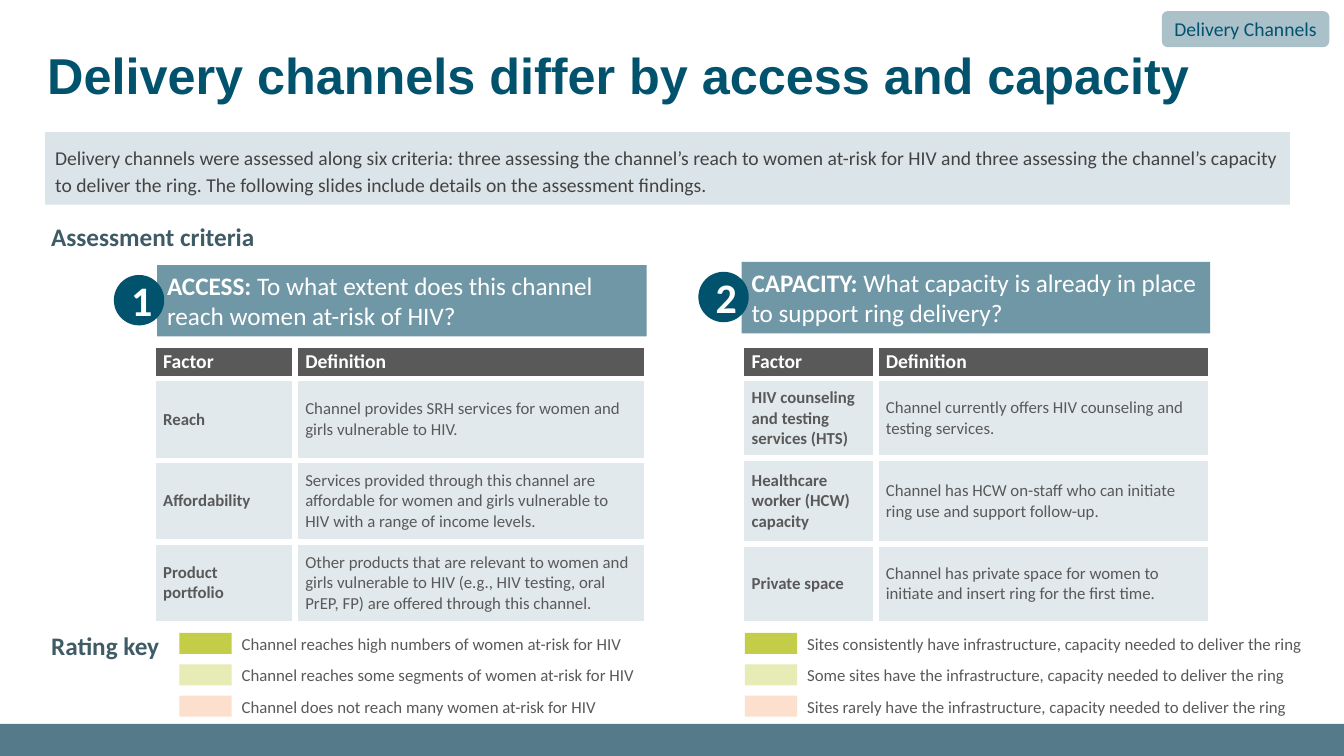
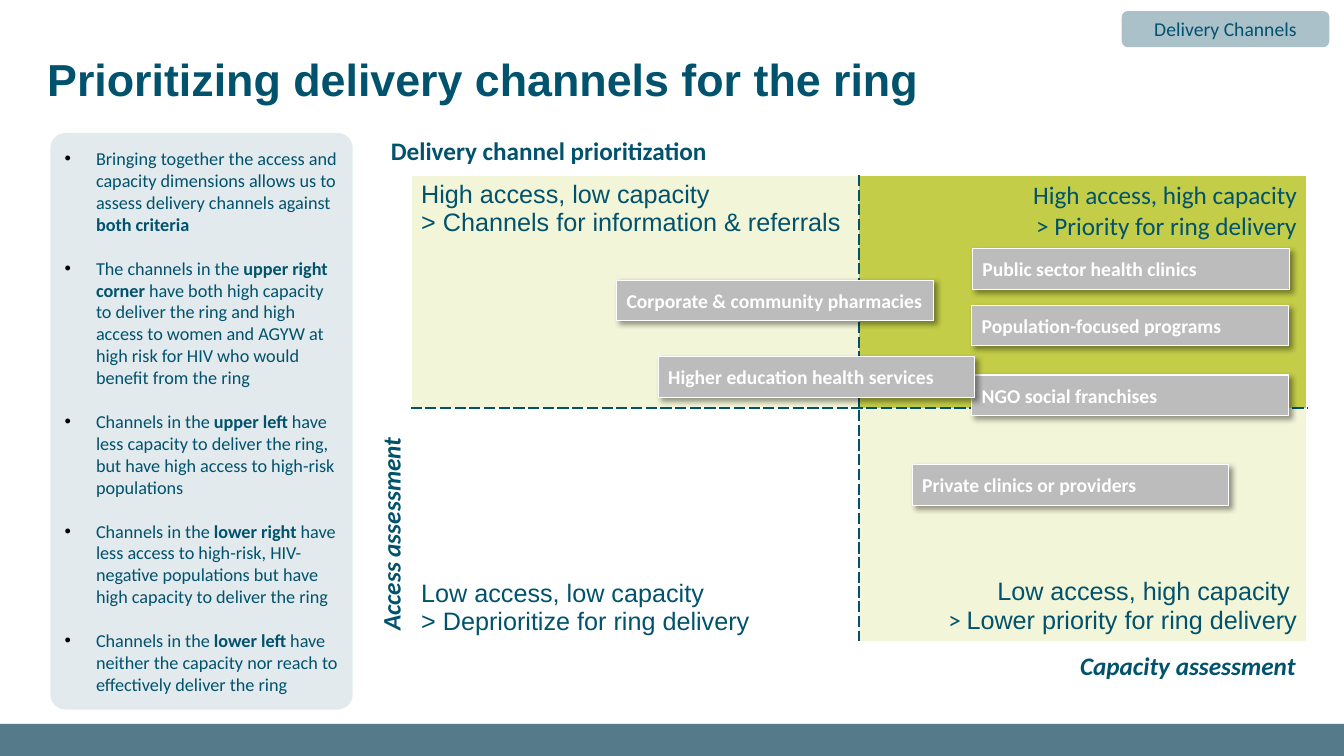
from lxml.etree import SubElement
from pptx import Presentation
from pptx.dml.color import RGBColor
from pptx.enum.shapes import MSO_SHAPE as Preset
from pptx.enum.text import MSO_ANCHOR as Anchor, PP_ALIGN as Align
from pptx.oxml.ns import qn
from pptx.util import Cm, Pt

COLORS = {
    "navy": "01526C", "band": "557A89", "tag": "AAC1CA", "heading": "7097A6",
    "section": "3F5B66", "intro": "DBE4E8", "intro_text": "434343",
    "gray": "595959", "cell": "E1E9EC", "panel": "E2EAED", "chip": "BCBCBC",
    "green": "C3CD47", "light_green": "E7EBB5", "peach": "FDDFCD",
    "pale": "F3F5D8", "white": "FFFFFF", "black": "000000",
}
WIDTH, HEIGHT = 33.87, 19.05
BAND_TOP = 18.24
TAG_RIGHT = 33.5
BOLD = {"bold": True}
CALIBRI = {"font": "Calibri"}

INTRO = (
    "Delivery channels were assessed along six criteria: three assessing the channel’s reach "
    "to women at-risk for HIV and three assessing the channel’s capacity to deliver the ring. "
    "The following slides include details on the assessment findings."
)
CRITERIA = [
    {
        "number": "1", "name": "ACCESS: ",
        "question": "To what extent does this channel reach women at-risk of HIV?",
        "heading": (3.96, 6.68, 12.34, 1.8),
        "table": (3.86, 8.69), "columns": [3.58, 8.86], "rows": [0.81, 2.06, 2.06, 2.06],
        "factors": [
            ("Reach", "Channel provides SRH services for women and girls vulnerable to HIV."),
            ("Affordability", "Services provided through this channel are affordable for women "
             "and girls vulnerable to HIV with a range of income levels."),
            ("Product\nportfolio", "Other products that are relevant to women and girls vulnerable "
             "to HIV (e.g., HIV testing, oral PrEP, FP) are offered through this channel."),
        ],
        "key_left": 4.52,
        "key": [
            "Channel reaches high numbers of women at-risk for HIV",
            "Channel reaches some segments of women at-risk for HIV",
            "Channel does not reach many women at-risk for HIV",
        ],
    },
    {
        "number": "2", "name": "CAPACITY: ",
        "question": "What capacity is already in place to support ring delivery?",
        "heading": (18.69, 6.6, 11.81, 1.8),
        "table": (18.69, 8.69), "columns": [3.38, 8.43], "rows": [0.81, 2.01, 2.16, 2.01],
        "factors": [
            ("HIV counseling and testing services (HTS)",
             "Channel currently offers HIV counseling and testing services."),
            ("Healthcare worker (HCW) capacity",
             "Channel has HCW on-staff who can initiate ring use and support follow-up."),
            ("Private space",
             "Channel has private space for women to initiate and insert ring for the first time."),
        ],
        "key_left": 18.77,
        "key": [
            "Sites consistently have infrastructure, capacity needed to deliver the ring",
            "Some sites have the infrastructure, capacity needed to deliver the ring",
            "Sites rarely have the infrastructure, capacity needed to deliver the ring",
        ],
    },
]
KEY_COLORS = ["green", "light_green", "peach"]
KEY_TOP, KEY_STEP = 15.95, 0.79

FINDINGS = [
    ["Bringing together the access and capacity dimensions allows us to assess delivery "
     "channels against ", ("both criteria", BOLD)],
    ["The channels in the ", ("upper right corner", BOLD),
     " have both high capacity to deliver the ring and high access to women and AGYW at high "
     "risk for HIV who would benefit from the ring"],
    ["Channels in the ", ("upper left ", BOLD),
     "have less capacity to deliver the ring, but have high access to high-risk populations"],
    ["Channels in the ", ("lower right ", BOLD),
     "have less access to high-risk, HIV-negative populations but have high capacity to "
     "deliver the ring"],
    ["Channels in the ", ("lower left ", BOLD),
     "have neither the capacity nor reach to effectively deliver the ring"],
]
QUADRANTS = [
    [
        (["High access, low capacity", "> Channels for information & referrals"],
         {"font": "Arial", "fill": "pale", "sides": "RB"}),
        (["High access, high capacity", "> Priority for ring delivery"],
         {"font": "Calibri", "fill": "green", "sides": "LB"}),
    ],
    [
        (["Low access, low capacity", "> Deprioritize for ring delivery"],
         {"font": "Arial", "fill": "white", "sides": "RT"}),
        (["Low access, high capacity ", [("> ", CALIBRI), "Lower priority for ring delivery"]],
         {"font": "Arial", "fill": "pale", "sides": "LT"}),
    ],
]
CHANNELS = [
    ("Corporate & community pharmacies", 15.54, 7.06),
    ("Private clinics or providers", 22.99, 11.71),
    ("NGO social franchises", 24.49, 9.45),
    ("Public sector health clinics", 24.51, 6.27),
    ("Population-focused programs", 24.49, 7.7),
    ("Higher education health services", 16.59, 8.99),
]
CHIP_SIZE = (7.98, 1.02)


def color(name):
    return RGBColor.from_string(COLORS[name])


def write_text(frame, paragraphs, size=18, font="Calibri", ink="navy", bold=False, italic=False,
               align=Align.LEFT, spacing=None, gap=0, bullet=False):
    for index, runs in enumerate(paragraphs):
        paragraph = frame.add_paragraph() if index else frame.paragraphs[0]
        paragraph.alignment = align
        paragraph.line_spacing = spacing
        paragraph.space_before = Pt(gap if index else 0)
        if bullet:
            add_bullet(paragraph)
        for item in [runs] if isinstance(runs, str) else runs:
            text, changes = (item, {}) if isinstance(item, str) else item
            for number, line in enumerate(text.split("\n")):
                if number:
                    paragraph.add_line_break()
                run = paragraph.add_run()
                run.text = line
                run.font.name = changes.get("font", font)
                run.font.size = Pt(size)
                run.font.bold = changes.get("bold", bold)
                run.font.italic = italic
                run.font.color.rgb = color(ink)


def add_bullet(paragraph):
    properties = paragraph._p.get_or_add_pPr()
    properties.set("marL", str(Cm(0.79)))
    properties.set("indent", str(-Cm(0.79)))
    bullet_color = SubElement(properties, qn("a:buClr"))
    SubElement(bullet_color, qn("a:srgbClr"), val=COLORS["black"])
    SubElement(properties, qn("a:buFont"), typeface="Arial")
    SubElement(properties, qn("a:buChar"), char="•")


def add_text(slide, at, paragraphs, anchor=Anchor.TOP, rotation=0, **style):
    box = slide.shapes.add_textbox(*map(Cm, at))
    box.rotation = rotation
    box.text_frame.word_wrap = True
    box.text_frame.vertical_anchor = anchor
    write_text(box.text_frame, paragraphs, **style)


def add_shape(slide, preset, at, fill, paragraphs=(), anchor=Anchor.MIDDLE, radius=None,
              line=None, **style):
    shape = slide.shapes.add_shape(preset, *map(Cm, at))
    shape.shadow.inherit = False
    shape.fill.solid()
    shape.fill.fore_color.rgb = color(fill)
    if line:
        shape.line.color.rgb = color(line)
        shape.line.width = Pt(0.75)
    else:
        shape.line.fill.background()
    if radius is not None:
        shape.adjustments[0] = radius
    shape.text_frame.word_wrap = True
    shape.text_frame.vertical_anchor = anchor
    write_text(shape.text_frame, paragraphs, **style)
    return shape


def add_shadow(shape):
    effects = shape._element.spPr.find(qn("a:effectLst"))
    shadow = SubElement(effects, qn("a:outerShdw"), blurRad=str(Pt(4)), dist=str(Pt(3)),
                        dir="2700000", algn="tl", rotWithShape="0")
    shade = SubElement(shadow, qn("a:srgbClr"), val=COLORS["black"])
    SubElement(shade, qn("a:alpha"), val="40000")


def add_table(slide, at, columns, rows):
    size = (sum(columns), sum(rows))
    table = slide.shapes.add_table(len(rows), len(columns), *map(Cm, (*at, *size))).table
    table.first_row = table.horz_banding = False
    for column, width in zip(table.columns, columns):
        column.width = Cm(width)
    for row, height in zip(table.rows, rows):
        row.height = Cm(height)
    return table


def fill_cell(cell, paragraphs, fill, sides, border, width, dash="solid", anchor=Anchor.MIDDLE,
              **style):
    properties = cell._tc.get_or_add_tcPr()
    for side in sides:
        line = SubElement(properties, qn(f"a:ln{side}"), w=str(Pt(width)))
        solid = SubElement(line, qn("a:solidFill"))
        SubElement(solid, qn("a:srgbClr"), val=COLORS[border])
        SubElement(line, qn("a:prstDash"), val=dash)
    cell.fill.solid()
    cell.fill.fore_color.rgb = color(fill)
    cell.vertical_anchor = anchor
    write_text(cell.text_frame, paragraphs, **style)


def add_base_slide(presentation, title, title_size, tag_width):
    slide = presentation.slides.add_slide(presentation.slide_layouts[6])
    add_shape(slide, Preset.RECTANGLE, (0, BAND_TOP, WIDTH, HEIGHT - BAND_TOP), "band")
    add_text(slide, (0.94, 0.58, 31.8, 2.21), [title], anchor=Anchor.BOTTOM, size=title_size,
             font="Arial", bold=True, spacing=0.9)
    add_shape(slide, Preset.ROUNDED_RECTANGLE, (TAG_RIGHT - tag_width, 0.28, tag_width, 0.91),
              "tag", ["Delivery Channels"], radius=0.167, size=14, align=Align.CENTER)
    return slide


def add_criterion(slide, criterion):
    left, top = criterion["heading"][:2]
    add_shape(slide, Preset.RECTANGLE, criterion["heading"], "heading",
              [[(criterion["name"], BOLD), criterion["question"]]], anchor=Anchor.TOP, ink="white")
    add_shape(slide, Preset.OVAL, (left - 1.09, top + 0.25, 1.27, 1.27), "navy",
              [criterion["number"]], size=30, bold=True, ink="white", align=Align.CENTER)

    table = add_table(slide, criterion["table"], criterion["columns"], criterion["rows"])
    for row, texts in enumerate([("Factor", "Definition"), *criterion["factors"]]):
        header = row == 0
        for column, text in enumerate(texts):
            fill_cell(table.cell(row, column), [text], "gray" if header else "cell", "LRTB",
                      "white", 4.5, size=14 if header else 12, bold=header or column == 0,
                      ink="white" if header else "gray")

    for index, (fill, label) in enumerate(zip(KEY_COLORS, criterion["key"])):
        key_left, key_top = criterion["key_left"], KEY_TOP + index * KEY_STEP
        add_shape(slide, Preset.RECTANGLE, (key_left, key_top, 1.32, 0.53), fill)
        add_text(slide, (key_left + 1.32, key_top - 0.11, 13.4, 0.76), [label], size=12, ink="gray")


def build_criteria(presentation):
    slide = add_base_slide(presentation, "Delivery channels differ by access and capacity", 36, 4.22)
    intro = add_shape(slide, Preset.RECTANGLE, (1.14, 3.33, 31.37, 1.83), "intro", [INTRO],
                      anchor=Anchor.TOP, size=14, ink="intro_text", spacing=1.15)
    intro.text_frame.margin_top = intro.text_frame.margin_bottom = Cm(0.25)
    for label, top, width in [("Assessment criteria", 5.46, 11.53), ("Rating key", 15.77, 3.86)]:
        add_text(slide, (1.04, top, width, 0.9), [label], bold=True, ink="section")
    for criterion in CRITERIA:
        add_criterion(slide, criterion)


def build_priorities(presentation):
    slide = add_base_slide(presentation, "Prioritizing delivery channels for the ring", 32, 5.23)
    table = add_table(slide, (10.36, 4.42), [11.29] * 2, [5.87] * 2)
    for row, quadrants in enumerate(QUADRANTS):
        for column, (lines, style) in enumerate(quadrants):
            fill_cell(table.cell(row, column), lines, border="navy", width=1.5, dash="dash",
                      anchor=Anchor.BOTTOM if row else Anchor.TOP,
                      align=Align.RIGHT if column else Align.LEFT, **style)
    add_text(slide, (5.92, 11.71, 7.85, 1.02), ["Access assessment"], rotation=270,
             bold=True, italic=True)
    add_text(slide, (26.97, 16.26, 6.35, 1.02), ["Capacity assessment"], bold=True, italic=True)
    for name, left, top in CHANNELS:
        add_shadow(add_shape(slide, Preset.RECTANGLE, (left, top, *CHIP_SIZE), "chip", [name],
                             line="white", size=14, bold=True, ink="white"))
    add_shape(slide, Preset.ROUNDED_RECTANGLE, (1.27, 3.35, 7.62, 14.53), "panel", FINDINGS,
              radius=0.05, size=13, gap=15.8, bullet=True)
    add_text(slide, (9.6, 3.28, 13.06, 1.02), ["Delivery channel prioritization"], bold=True)


def main():
    presentation = Presentation()
    presentation.slide_width, presentation.slide_height = Cm(WIDTH), Cm(HEIGHT)
    build_criteria(presentation)
    build_priorities(presentation)
    presentation.save("out.pptx")


if __name__ == "__main__":
    main()
